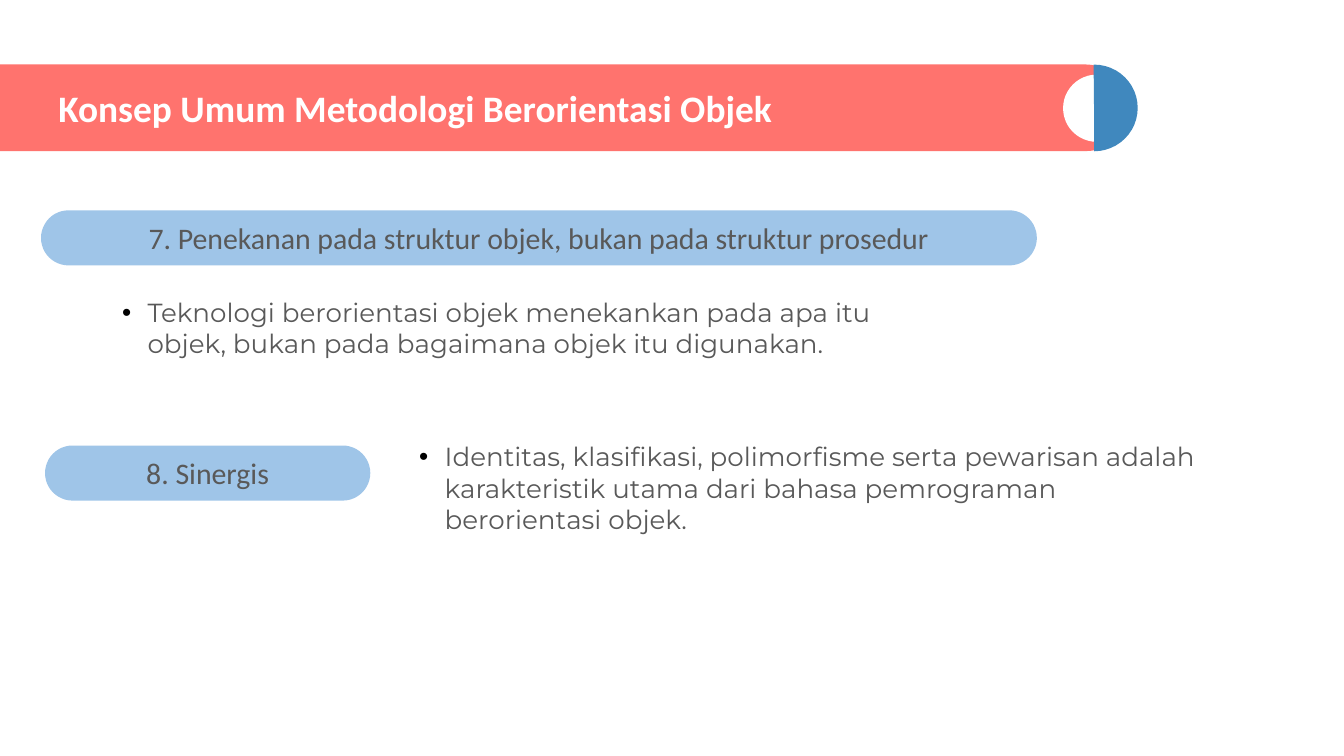
"""Builds a slide on two concepts of object-oriented methodology."""
from lxml import etree
from pptx import Presentation
from pptx import util as u
from pptx.dml.color import RGBColor
from pptx.enum import shapes, text
from pptx.oxml.ns import qn

PX = 4572
KIND = shapes.MSO_SHAPE
GREY, SKY, WHITE = "595959", "9FC5E8", "FFFFFF"
hue = RGBColor.from_string

deck = Presentation()
deck.slide_width, deck.slide_height = 2000 * PX, 1125 * PX
slide = deck.slides.add_slide(deck.slide_layouts[6])


def draw(kind, box, fill):
    shape = slide.shapes.add_shape(kind, *[n * PX for n in box])
    shape.shadow.inherit = False
    shape.fill.solid()
    shape.fill.fore_color.rgb = hue(fill)
    shape.line.fill.background()
    return shape


def write(shape, words, font, size, tint, bold=False):
    frame = shape.text_frame
    frame.text = words
    frame.word_wrap = True
    frame.margin_left = frame.margin_right = 20 * PX
    frame.margin_top = frame.margin_bottom = 20 * PX
    part = frame.paragraphs[0]
    face = part.runs[0].font
    face.name, face.size, face.bold = font, u.Pt(size), bold
    face.color.rgb = hue(tint)
    return part


bar = draw(KIND.ROUNDED_RECTANGLE, (-64, 96, 1744, 129), "FF736E")
bar.adjustments[0] = 0.5
disc = draw(KIND.OVAL, (1582, 111, 100, 100), WHITE)
half = draw(KIND.PIE, (1563, 96, 130, 129), "4088BE")
half.adjustments[0], half.adjustments[1] = 53.67, 162
disc.rotation = half.rotation = 180

title = slide.shapes.add_textbox(67 * PX, 119 * PX, 1482 * PX, 82 * PX)
write(title, "Konsep Umum Metodologi Berorientasi Objek", "Calibri", 20, WHITE, True)
title.text_frame.vertical_anchor = text.MSO_ANCHOR.MIDDLE

heads = [
    (61, 313, 1482, "7. Penekanan pada struktur objek, bukan pada struktur prosedur"),
    (67, 663, 484, "8. Sinergis"),
]
for left, top, width, words in heads:
    pill = draw(KIND.ROUNDED_RECTANGLE, (left, top, width, 82), SKY)
    pill.adjustments[0] = 0.5
    part = write(pill, words, "Calibri", 16, GREY)
    part.alignment = text.PP_ALIGN.CENTER
    pill.text_frame.vertical_anchor = text.MSO_ANCHOR.MIDDLE

notes = [
    (162, 421, "Teknologi berorientasi objek menekankan pada apa itu objek, "
               "bukan pada bagaimana objek itu digunakan."),
    (604, 636, "Identitas, klasifikasi, polimorfisme serta pewarisan adalah "
               "karakteristik utama dari bahasa pemrograman berorientasi objek."),
]
for left, top, words in notes:
    box = slide.shapes.add_textbox(left * PX, top * PX, 1208 * PX, 68 * PX)
    part = write(box, words, "Montserrat", 14, GREY)
    part.space_after = u.Pt(6)
    props = part._p.get_or_add_pPr()
    props.set("marL", str(38 * PX))
    props.set("indent", str(-38 * PX))
    tint = etree.SubElement(props, qn("a:buClr"))
    etree.SubElement(tint, qn("a:srgbClr"), val="000000")
    etree.SubElement(props, qn("a:buFont"), typeface="Arial")
    etree.SubElement(props, qn("a:buChar"), char="•")

deck.save("out.pptx")
